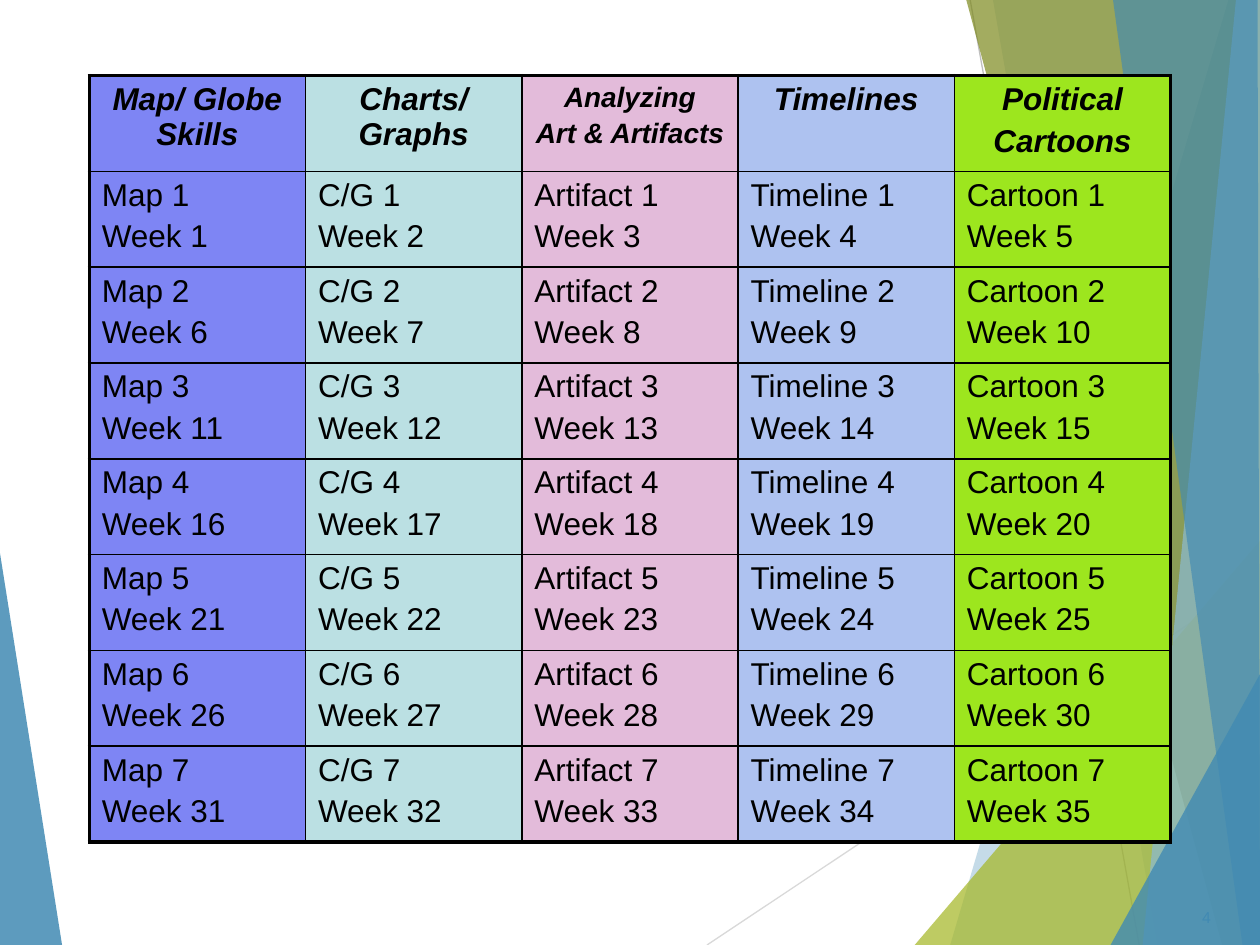
from lxml.etree import SubElement
from pptx import Presentation
from pptx.dml.color import RGBColor
from pptx.enum.shapes import MSO_CONNECTOR
from pptx.enum.text import PP_ALIGN
from pptx.oxml.ns import qn
from pptx.util import Pt

WIDTH, HEIGHT = 720, 540
FONT = "Arial"
BLACK, BLUE = "000000", "418AB3"

# header lines, header size, item name, column fill
COLUMNS = [
    (["Map/ Globe Skills"], 18, "Map", "7E85F4"),
    (["Charts/ Graphs"], 18, "C/G", "BBE0E3"),
    (["Analyzing", "Art & Artifacts"], 16, "Artifact", "E3BBDA"),
    (["Timelines"], 18, "Timeline", "AEC2F0"),
    (["Political", "Cartoons"], 18, "Cartoon", "9DE61E"),
]
ROUNDS = 7
TABLE_LEFT, TABLE_TOP, COL_WIDTH, ROW_HEIGHT = 51, 43.2, 123.6, 54.75
OUTER, INNER = 2.25, 1

LEFT_FACET = ([(0, 316), (35.5, 540), (0, 540)], BLUE, 85)
LINES = [
    ((404, 540), (720, 329.5), "D9D9D9"),
    ((554.4, 0), (651, 540), "BFBFBF"),
]
# outline, fill, opacity in percent
RIGHT_FACETS = [
    ([(702, 0), (543, 540), (720, 540), (720, 0)], BLUE, 30),
    ([(567.4, 0), (661.7, 540), (720, 540), (720, 0)], BLUE, 20),
    ([(522.7, 540), (720, 309), (720, 540)], "A6B727", 72),
    ([(552.2, 0), (698.4, 540), (720, 540), (720, 0)], "7D891D", 70),
    ([(706.3, 0), (653, 540), (720, 540), (720, 0)], "8ABAD4", 70),
    ([(636, 0), (710, 540), (720, 540), (718.6, 0)], BLUE, 65),
    ([(634.6, 540), (720, 385.2), (720, 540)], BLUE, 80),
]


def rgb(color):
    return RGBColor.from_string(color)


def add_facet(shapes, outline, color, opacity):
    points = [(Pt(x), Pt(y)) for x, y in outline]
    builder = shapes.build_freeform(*points[0])
    builder.add_line_segments(points[1:], close=True)
    sp = builder.convert_to_shape()
    sp.shadow.inherit = False
    sp.line.fill.background()
    sp.fill.solid()
    sp.fill.fore_color.rgb = rgb(color)
    clr = sp.fill._xPr.find(qn("a:solidFill"))[0]
    SubElement(clr, qn("a:alpha"), val=str(opacity * 1000))


def add_line(shapes, start, end, color):
    ends = [Pt(v) for v in (*start, *end)]
    line = shapes.add_connector(MSO_CONNECTOR.STRAIGHT, *ends)
    line.line.color.rgb = rgb(color)
    line.line.width = Pt(0.75)
    SubElement(line._element.spPr, qn("a:effectLst"))


def write(tf, lines, size=18, color=BLACK, bold=False, italic=False,
          align=PP_ALIGN.LEFT):
    for i, text in enumerate(lines):
        p = tf.paragraphs[0] if i == 0 else tf.add_paragraph()
        p.alignment = align
        p.space_before = Pt(0.2 * size if i else 0)
        r = p.add_run()
        r.text = text
        font = r.font
        font.name, font.size = FONT, Pt(size)
        font.bold, font.italic = bold, italic
        font.color.rgb = rgb(color)


def set_borders(cell, widths):
    """Draw black cell borders; widths maps L, R, T, B to points."""
    tc_pr = cell._tc.get_or_add_tcPr()
    for side, width in widths.items():
        ln = SubElement(tc_pr, qn("a:ln" + side), w=str(Pt(width)))
        fill = SubElement(ln, qn("a:solidFill"))
        SubElement(fill, qn("a:srgbClr"), val=BLACK)


def add_schedule(shapes):
    n_rows, n_cols = ROUNDS + 1, len(COLUMNS)
    table = shapes.add_table(
        n_rows, n_cols, Pt(TABLE_LEFT), Pt(TABLE_TOP),
        Pt(COL_WIDTH * n_cols), Pt(ROW_HEIGHT * n_rows)).table
    for row in table.rows:
        row.height = Pt(ROW_HEIGHT)
    for c, (header, size, item, color) in enumerate(COLUMNS):
        table.columns[c].width = Pt(COL_WIDTH)
        for r in range(n_rows):
            cell = table.cell(r, c)
            set_borders(cell, {
                "L": OUTER if c == 0 else INNER,
                "R": OUTER if c == n_cols - 1 else INNER,
                "T": OUTER if r == 0 else INNER,
                "B": OUTER if r == n_rows - 1 else INNER,
            })
            cell.fill.solid()
            cell.fill.fore_color.rgb = rgb(color)
            if r == 0:
                write(cell.text_frame, header, size=size, bold=True,
                      italic=True, align=PP_ALIGN.CENTER)
            else:
                week = (r - 1) * n_cols + c + 1
                write(cell.text_frame, [f"{item} {r}", f"Week {week}"])


def main():
    prs = Presentation()
    prs.slide_width, prs.slide_height = Pt(WIDTH), Pt(HEIGHT)
    shapes = prs.slides.add_slide(prs.slide_layouts[6]).shapes
    add_facet(shapes, *LEFT_FACET)
    for line in LINES:
        add_line(shapes, *line)
    for facet in RIGHT_FACETS:
        add_facet(shapes, *facet)
    add_schedule(shapes)
    number = shapes.add_textbox(Pt(655), Pt(515), Pt(44), Pt(22)).text_frame
    number.word_wrap = True
    write(number, ["4"], size=9, color=BLUE, align=PP_ALIGN.RIGHT)
    prs.save("out.pptx")


if __name__ == "__main__":
    main()
